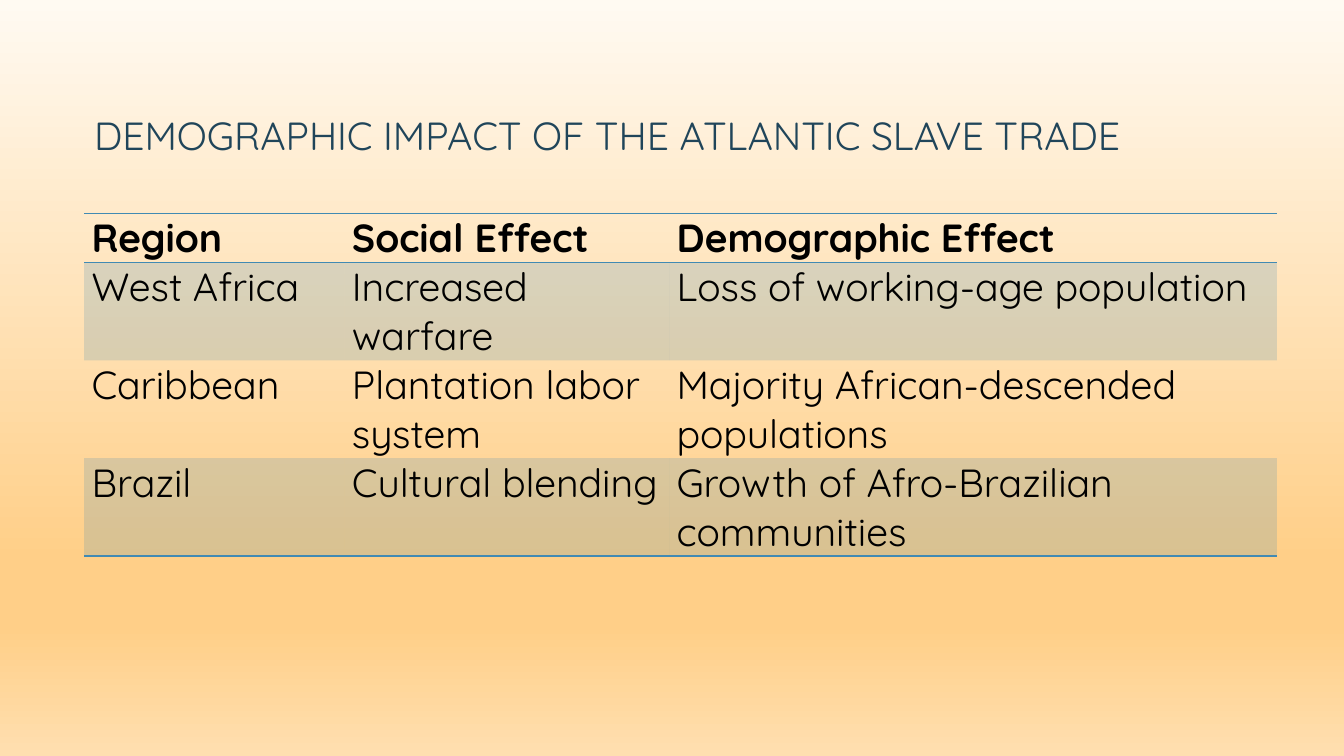
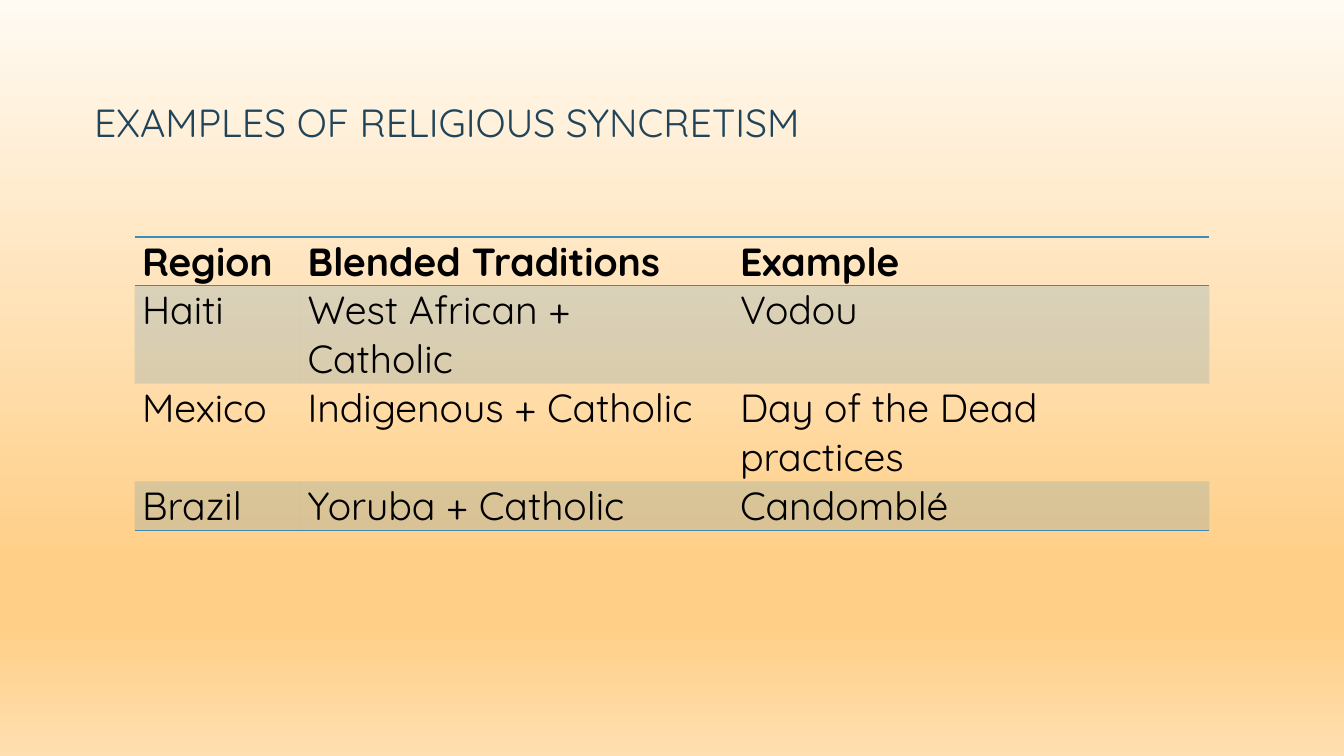
from lxml import etree
from pptx import Presentation
from pptx.dml.color import RGBColor
from pptx.enum.text import MSO_ANCHOR, MSO_AUTO_SIZE, PP_ALIGN
from pptx.oxml.ns import qn
from pptx.util import Cm, Pt

LEFT = PP_ALIGN.LEFT
TOP, BOTTOM = MSO_ANCHOR.TOP, MSO_ANCHOR.BOTTOM
NO_AUTOFIT = MSO_AUTO_SIZE.NONE
TITLE_ONLY_LAYOUT = 5
PLAIN_TABLE_STYLE = "{2D5ABB26-0587-4C30-8999-92F81FD0307C}"

COLORS = {
    "title": "20455A",
    "text": "000000",
    "accent": "418AB3",
    "sky": "FFFAF2",
    "sand": "FFCF88",
    "ground": "FFDFB0",
}
BACKGROUND_STOPS = [(0, "sky"), (74, "sand"), (83, "sand"), (100, "ground")]


class Deck:
    font_name = "Quicksand"
    font_size = Pt(28)
    line_height = 1.23
    cell_margin = Cm(0.19)
    band_opacity = 20

    def __init__(self):
        self.presentation = Presentation()
        self.presentation.slide_width = Cm(33.87)
        self.presentation.slide_height = Cm(19.05)
        self.slide = None
        self.paint_background()

    def paint_background(self):
        master = self.presentation.slide_master
        fill = master.background.fill
        fill.gradient()
        fill.gradient_angle = 270
        stops = master.element.find(".//" + qn("a:gsLst"))
        for stop in list(stops):
            stops.remove(stop)
        for percent, color in BACKGROUND_STOPS:
            stop = etree.SubElement(stops, qn("a:gs"), pos=str(percent * 1000))
            etree.SubElement(stop, qn("a:srgbClr"), val=COLORS[color])

    def add_slide(self):
        layout = self.presentation.slide_layouts[TITLE_ONLY_LAYOUT]
        self.slide = self.presentation.slides.add_slide(layout)

    def add_run(self, paragraph, text, color, bold=False):
        run = paragraph.add_run()
        run.text = text
        run.font.name = self.font_name
        run.font.size = self.font_size
        run.font.bold = bold
        run.font.color.rgb = RGBColor.from_string(COLORS[color])

    def title(self, text, top, height):
        shape = self.slide.shapes.title
        shape.left, shape.top = Cm(2.12), Cm(top)
        shape.width, shape.height = Cm(29.63), Cm(height)
        frame = shape.text_frame
        frame.word_wrap = True
        frame.auto_size = NO_AUTOFIT
        frame.vertical_anchor = BOTTOM
        paragraph = frame.paragraphs[0]
        paragraph.alignment = LEFT
        paragraph.line_spacing = 0.9
        self.add_run(paragraph, text, "title")

    def table(self, left, top, column_widths, row_lines, rows):
        """Draw a banded table; row_lines gives the text lines in each row."""
        frame = self.slide.shapes.add_table(
            len(rows), len(column_widths), Cm(left), Cm(top),
            Cm(sum(column_widths)), Cm(self.line_height * sum(row_lines)))
        table = frame.table
        frame._element.find(".//" + qn("a:tableStyleId")).text = PLAIN_TABLE_STYLE
        for column, width in zip(table.columns, column_widths):
            column.width = Cm(width)
        for row, lines in zip(table.rows, row_lines):
            row.height = Cm(self.line_height * lines)
        last = len(rows) - 1
        for row_index, texts in enumerate(rows):
            header = row_index == 0
            for column_index, text in enumerate(texts):
                cell = table.cell(row_index, column_index)
                cell.margin_left = cell.margin_right = self.cell_margin
                cell.margin_top = cell.margin_bottom = 0
                cell.vertical_anchor = TOP
                paragraph = cell.text_frame.paragraphs[0]
                self.add_run(paragraph, text, "text", bold=header)
                if header:
                    self.add_border(cell, "a:lnT")
                if row_index in (0, last):
                    self.add_border(cell, "a:lnB")
                self.fill_cell(cell, banded=row_index % 2 == 1)

    def add_border(self, cell, side):
        properties = cell._tc.get_or_add_tcPr()
        line = etree.SubElement(properties, qn(side), w=str(Pt(1)))
        fill = etree.SubElement(line, qn("a:solidFill"))
        etree.SubElement(fill, qn("a:srgbClr"), val=COLORS["accent"])

    def fill_cell(self, cell, banded):
        if not banded:
            cell.fill.background()
            return
        cell.fill.solid()
        cell.fill.fore_color.rgb = RGBColor.from_string(COLORS["accent"])
        color = cell._tc.tcPr.find(qn("a:solidFill")).find(qn("a:srgbClr"))
        etree.SubElement(color, qn("a:alpha"), val=str(self.band_opacity * 1000))


def main():
    deck = Deck()

    deck.add_slide()
    deck.title("DEMOGRAPHIC IMPACT OF THE ATLANTIC SLAVE TRADE", 1.9, 2.23)
    deck.table(2.12, 5.38, [6.56, 8.18, 15.32], [1, 2, 2, 2], [
        ("Region", "Social Effect", "Demographic Effect"),
        ("West Africa", "Increased warfare", "Loss of working-age population"),
        ("Caribbean", "Plantation labor system",
         "Majority African-descended populations"),
        ("Brazil", "Cultural blending", "Growth of Afro-Brazilian communities"),
    ])

    deck.add_slide()
    deck.title("EXAMPLES OF RELIGIOUS SYNCRETISM", 2.12, 1.69)
    deck.table(3.39, 5.97, [4.17, 10.9, 12.02], [1, 2, 2, 1], [
        ("Region", "Blended Traditions", "Example"),
        ("Haiti", "West African + Catholic", "Vodou"),
        ("Mexico", "Indigenous + Catholic", "Day of the Dead practices"),
        ("Brazil", "Yoruba + Catholic", "Candomblé"),
    ])

    deck.presentation.save("out.pptx")


if __name__ == "__main__":
    main()
